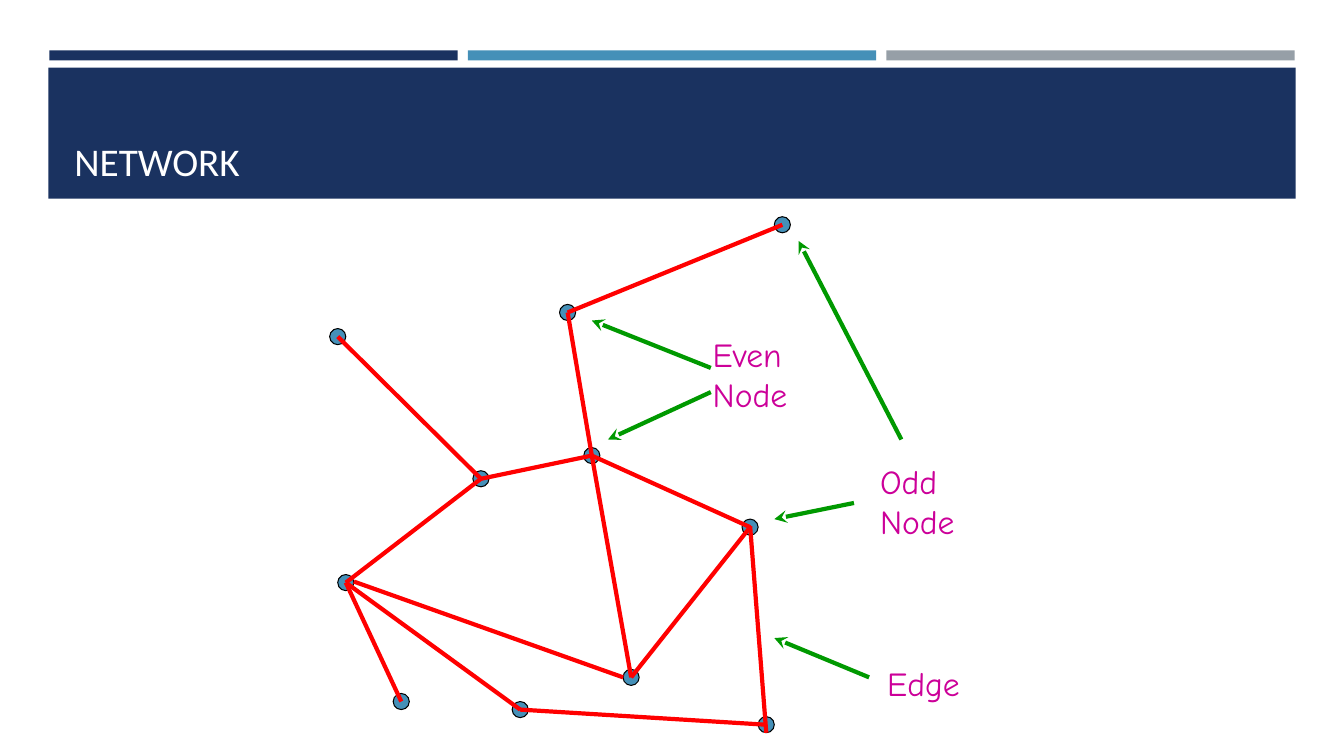
from lxml import etree
from pptx import Presentation
from pptx import util as u
from pptx.dml.color import RGBColor
from pptx.enum import shapes, text
from pptx.oxml import ns

COLOURS = {
    "navy": "1A3260", "blue": "4590B8", "grey": "969FA7", "black": "000000",
    "white": "FFFFFF", "edge": "FF0000", "pointer": "009900", "label": "CC0099",
}
NODE_SIZE = 0.16
NODES = {
    "west": (3.35, 3.34), "east": (7.44, 5.23), "upper": (5.63, 3.10),
    "hub": (3.43, 5.78), "south": (5.16, 7.04), "centre": (5.87, 4.52),
    "inner": (4.77, 4.75), "southwest": (3.98, 6.96), "southeast": (7.60, 7.19),
    "lower": (6.26, 6.72), "top": (7.76, 2.23),
}
EDGES = [
    ("west", "inner"), ("hub", "southwest"), ("inner", "centre"),
    ("hub", "inner"), ("lower", "east"), ("centre", "east"),
    ("centre", "upper"), ("upper", "top"), ("hub", "south"),
    ("south", "southeast"), ("lower", "centre"),
]
OFFSET_EDGES = [((3.51, 5.77), (6.18, 6.72)), ((7.44, 5.22), (7.60, 7.27))]
LABELS = [
    ("Even Node", (6.97, 3.26, 1.26, 0.91)),
    ("Odd Node", (8.63, 4.52, 1.26, 0.91)),
    ("Edge", (8.70, 6.53, 1.81, 0.50)),
]
POINTERS = [
    ((7.05, 3.89), (6.03, 4.36)), ((8.47, 4.99), (7.68, 5.15)),
    ((8.94, 4.36), (7.92, 2.39)), ((7.05, 3.65), (5.87, 3.18)),
    ((8.62, 6.72), (7.68, 6.33)),
]


class NetworkSlide:
    """Draws styled elements on the current slide."""

    def __init__(self, slide):
        self.slide = slide

    def colour(self, name):
        return RGBColor.from_string(COLOURS[name])

    def shape(self, preset, box, fill, outline=None):
        shape = self.slide.shapes.add_shape(preset, *map(u.Inches, box))
        shape.shadow.inherit = False
        shape.fill.solid()
        shape.fill.fore_color.rgb = self.colour(fill)
        if outline:
            shape.line.color.rgb = self.colour(outline)
            shape.line.width = u.Pt(0.75)
        else:
            shape.line.fill.background()

    def bar(self, box, fill):
        self.shape(shapes.MSO_SHAPE.RECTANGLE, box, fill)

    def node(self, centre):
        x, y = (c - NODE_SIZE / 2 for c in centre)
        self.shape(shapes.MSO_SHAPE.OVAL, (x, y, NODE_SIZE, NODE_SIZE), "blue", "black")

    def line(self, start, end, colour, arrow=False):
        line = self.slide.shapes.add_connector(
            shapes.MSO_CONNECTOR.STRAIGHT, *map(u.Inches, (*start, *end)))
        line.line.color.rgb = self.colour(colour)
        line.line.width = u.Pt(3)
        if arrow:
            etree.SubElement(line.line._get_or_add_ln(), ns.qn("a:tailEnd"), type="stealth")
        etree.SubElement(line._element.spPr, ns.qn("a:effectLst"))

    def text(self, words, box, size, font, colour, anchor=text.MSO_ANCHOR.TOP):
        frame = self.slide.shapes.add_textbox(*map(u.Inches, box)).text_frame
        frame.word_wrap = True
        frame.vertical_anchor = anchor
        run = frame.paragraphs[0].add_run()
        run.text = words
        run.font.size = u.Pt(size)
        run.font.name = font
        run.font.color.rgb = self.colour(colour)


def main():
    deck = Presentation()
    deck.slide_width, deck.slide_height = u.Inches(13.33), u.Inches(7.5)
    network = NetworkSlide(deck.slides.add_slide(deck.slide_layouts[6]))

    for column, fill in enumerate(("navy", "blue", "grey")):
        network.bar((0.49 + 4.15 * column, 0.5, 4.05, 0.1), fill)
    network.bar((0.48, 0.67, 12.37, 1.3), "navy")
    network.text("NETWORK", (0.64, 0.77, 12.06, 1.11), 28, "Calibri", "white",
                 text.MSO_ANCHOR.BOTTOM)

    for centre in NODES.values():
        network.node(centre)
    for start, end in EDGES:
        network.line(NODES[start], NODES[end], "edge")
    for start, end in OFFSET_EDGES:
        network.line(start, end, "edge")
    for words, box in LABELS:
        network.text(words, box, 24, "Comic Neue", "label")
    for start, end in POINTERS:
        network.line(start, end, "pointer", arrow=True)

    deck.save("out.pptx")


if __name__ == "__main__":
    main()
